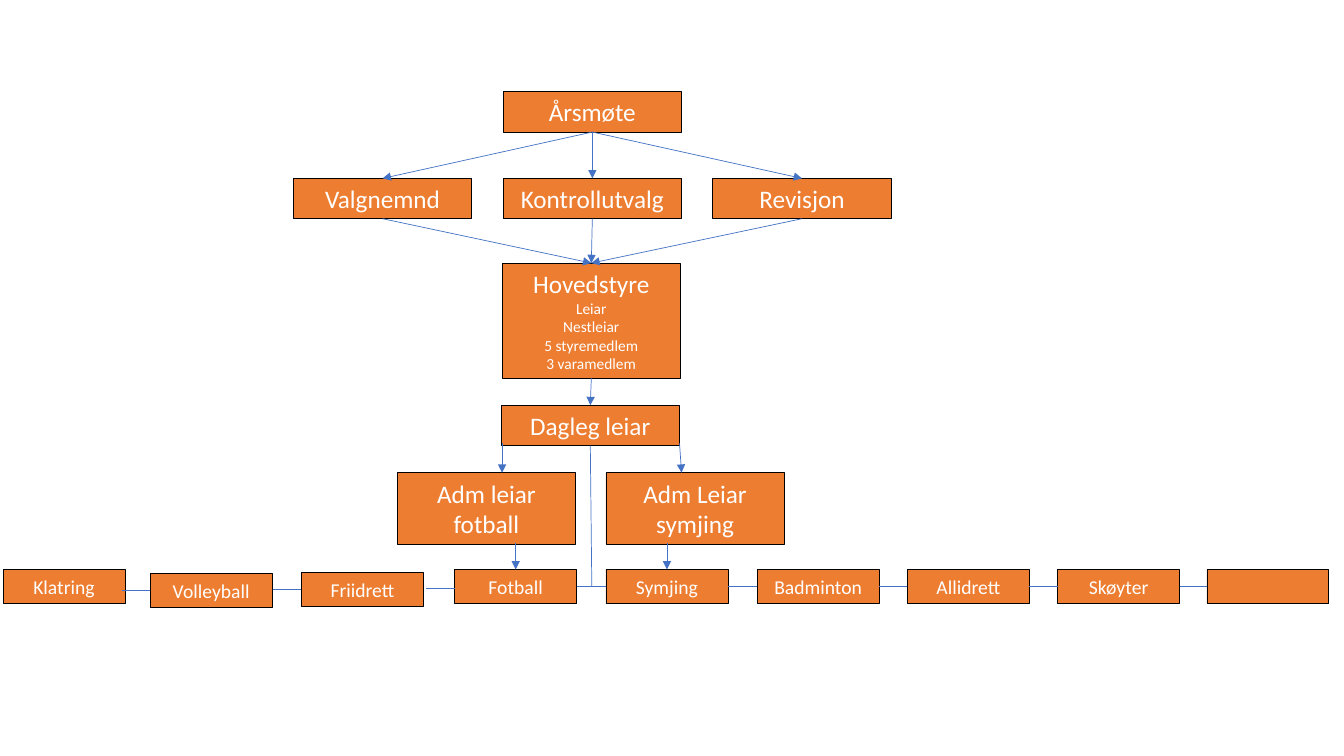
import pptx
import pptx.dml.color
import pptx.enum.shapes
import pptx.enum.text
import pptx.oxml.ns
import pptx.oxml.xmlchemy
import pptx.util
from pptx.util import Inches

ORANGE = pptx.dml.color.RGBColor(0xED, 0x7D, 0x31)
BLUE = pptx.dml.color.RGBColor(0x44, 0x72, 0xC4)
BLACK = pptx.dml.color.RGBColor(0x00, 0x00, 0x00)
WHITE = pptx.dml.color.RGBColor(0xFF, 0xFF, 0xFF)
FONT = "Calibri"
TOP, LEFT, BOTTOM, RIGHT = range(4)
UNIT_WIDTH, UNIT_HEIGHT = Inches(1.77), Inches(0.4)
SPORT_WIDTH, SPORT_HEIGHT = Inches(1.21), Inches(0.34)
SPORTS = [
    ("Klatring", 0, 0),
    ("Volleyball", 1.46, 0.04),
    ("Friidrett", 2.96, 0.03),
    ("Fotball", 4.48, 0),
    ("Symjing", 5.98, 0),
    ("Badminton", 7.48, 0),
    ("Allidrett", 8.97, 0),
    ("Skøyter", 10.46, 0),
    ("", 11.94, 0),
]
LINK_LEVELS = [0.21, 0.2, 0.19, 0.17, 0.17, 0.17, 0.17, 0.17]


def add_box(slide, left, top, lines, width=UNIT_WIDTH, height=UNIT_HEIGHT):
    """Add an orange box holding centred lines given as (text, size) pairs."""
    shape = slide.shapes.add_shape(
        pptx.enum.shapes.MSO_SHAPE.RECTANGLE, left, top, width, height)
    shape.shadow.inherit = False
    shape.fill.solid()
    shape.fill.fore_color.rgb = ORANGE
    shape.line.color.rgb = BLACK
    shape.line.width = pptx.util.Pt(0.5)
    frame = shape.text_frame
    frame.word_wrap = True
    if lines:
        frame.auto_size = pptx.enum.text.MSO_AUTO_SIZE.SHAPE_TO_FIT_TEXT
    for index, (text, size) in enumerate(lines):
        paragraph = frame.add_paragraph() if index else frame.paragraphs[0]
        paragraph.alignment = pptx.enum.text.PP_ALIGN.CENTER
        run = paragraph.add_run()
        run.text = text
        run.font.name = FONT
        run.font.size = pptx.util.Pt(size)
        run.font.color.rgb = WHITE
    return shape


def add_link(slide, start, end, arrow=True):
    """Link two ends, each either a point or a (shape, side) pair."""
    points = [(0, 0) if hasattr(spot[0], "shape_id") else spot for spot in (start, end)]
    connector = slide.shapes.add_connector(
        pptx.enum.shapes.MSO_CONNECTOR.STRAIGHT, *points[0], *points[1])
    for spot, join in ((start, connector.begin_connect), (end, connector.end_connect)):
        if hasattr(spot[0], "shape_id"):
            join(*spot)
    connector.line.color.rgb = BLUE
    connector.line.width = pptx.util.Pt(0.5)
    properties = connector._element.find(pptx.oxml.ns.qn("p:spPr"))
    if arrow:
        tail = pptx.oxml.xmlchemy.OxmlElement("a:tailEnd")
        tail.set("type", "triangle")
        properties.find(pptx.oxml.ns.qn("a:ln")).append(tail)
    properties.append(pptx.oxml.xmlchemy.OxmlElement("a:effectLst"))


def add_governance(slide, left, top):
    """Add the annual meeting, its committees and the main board."""
    meeting = add_box(slide, left + Inches(2.08), top, [("Årsmøte", 18)])
    board = add_box(
        slide, left + Inches(2.07), top + Inches(1.7),
        [("Hovedstyre", 18), ("Leiar", 11), ("Nestleiar", 11),
         ("5 styremedlem", 11), ("3 varamedlem", 11)],
        height=Inches(1.14))
    for index, name in enumerate(["Valgnemnd", "Kontrollutvalg", "Revisjon"]):
        committee = add_box(
            slide, left + index * Inches(2.08), top + Inches(0.86), [(name, 18)])
        add_link(slide, (meeting, BOTTOM), (committee, TOP))
        add_link(slide, (committee, BOTTOM), (board, TOP))
    return board


def add_management(slide, left, top, board):
    """Add the daily manager and the two administrative leaders."""
    manager = add_box(slide, left + Inches(1.03), top, [("Dagleg leiar", 18)])
    add_link(slide, (board, BOTTOM), (manager, TOP))
    for offset, name, start, end in (
            (0, "Adm leiar fotball", 1.04, 1.04),
            (2.07, "Adm Leiar symjing", 2.8, 2.82)):
        add_box(slide, left + Inches(offset), top + Inches(0.67),
                [(name, 18)], height=Inches(0.71))
        add_link(slide, (left + Inches(start), top + Inches(0.38)),
                 (left + Inches(end), top + Inches(0.67)))
    return manager


def add_sports(slide, left, top, manager):
    """Add the row of sports groups with the lines that lead to it."""
    groups = [
        add_box(slide, left + Inches(across), top + Inches(down),
                [(name, 14)] if name else [], SPORT_WIDTH, SPORT_HEIGHT)
        for name, across, down in SPORTS]
    for index, level in enumerate(LINK_LEVELS):
        before, after = groups[index:index + 2]
        height = top + Inches(level)
        start = (after.left - Inches(0.28), height)
        end = (after.left, height)
        if abs(before.top + SPORT_HEIGHT // 2 - height) < Inches(0.005):
            start = (before, RIGHT)
        if abs(after.top + SPORT_HEIGHT // 2 - height) < Inches(0.005):
            end = (after, LEFT)
        add_link(slide, start, end, arrow=False)
    for group in groups[3:5]:
        middle = group.left + SPORT_WIDTH // 2
        add_link(slide, (middle, top - Inches(0.26)), (group, TOP))
    trunk_end = (left + Inches(5.84), top + Inches(0.17))
    add_link(slide, (manager, BOTTOM), trunk_end, arrow=False)


def main():
    """Build the organisation chart and save it."""
    presentation = pptx.Presentation()
    presentation.slide_width = Inches(13.33)
    presentation.slide_height = Inches(7.5)
    slide = presentation.slides.add_slide(presentation.slide_layouts[6])
    board = add_governance(slide, Inches(2.91), Inches(0.91))
    manager = add_management(slide, Inches(3.94), Inches(4.02), board)
    add_sports(slide, Inches(0.03), Inches(5.65), manager)
    presentation.save("out.pptx")


if __name__ == "__main__":
    main()
